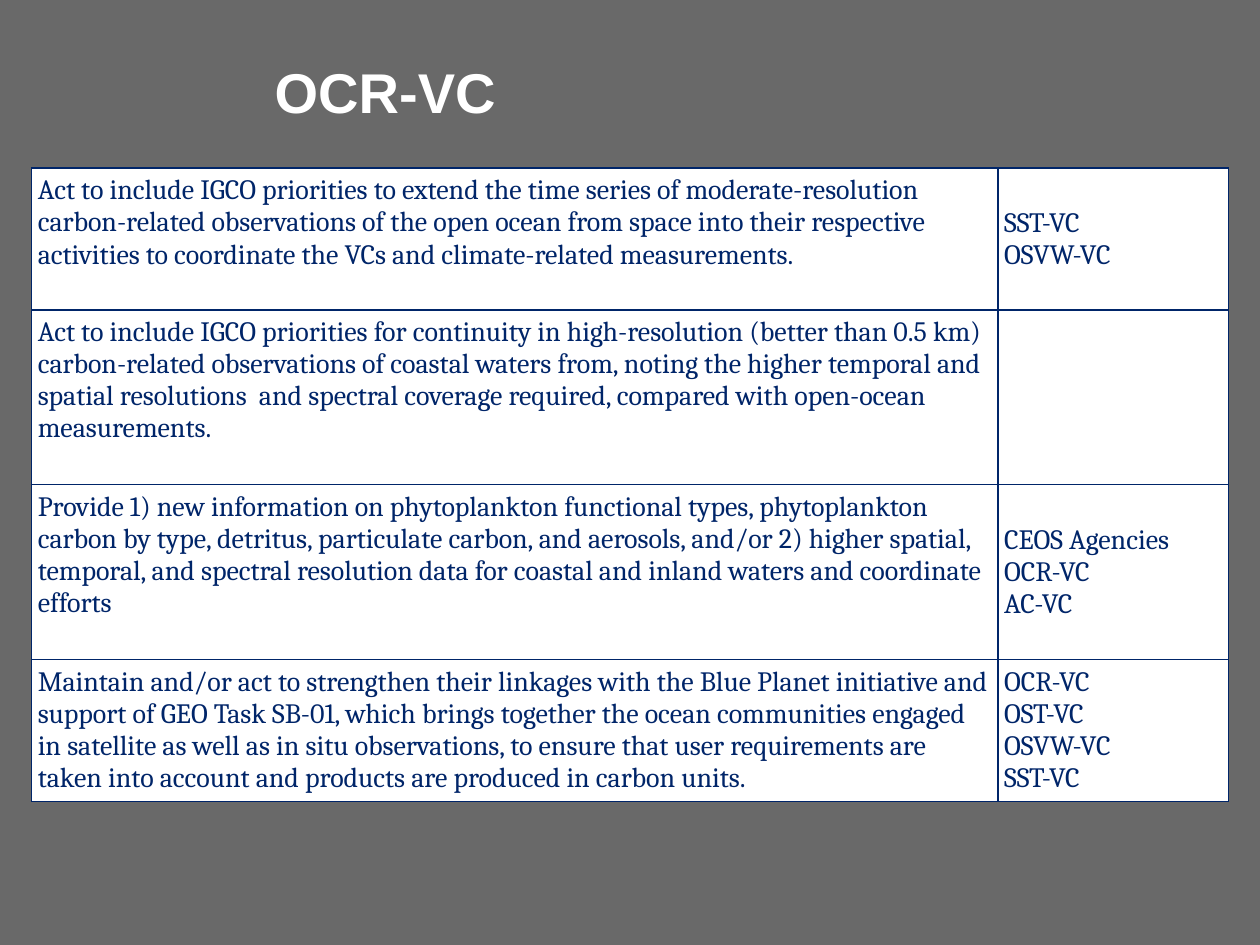
from typing import NamedTuple

from lxml.etree import SubElement
from pptx import Presentation
from pptx.dml.color import RGBColor as Rgb
from pptx.enum.text import MSO_ANCHOR as Anchor, MSO_AUTO_SIZE as Fit, PP_ALIGN as Align
from pptx.oxml.ns import qn
from pptx.util import Inches, Pt

WIDE, HIGH = 10, 7.5
COLORS = {"back": "696969", "cell": "FFFFFF", "ink": "002569", "title": "FFFFFF"}
COLS = (0.767, 0.183)  # shares of the slide's width
PAD = Inches(0.05)


class Action(NamedTuple):
    task: str
    teams: tuple[str, ...]
    share: float  # row height as a share of the slide's height


ACTIONS = [
    Action("Act to include IGCO priorities to extend the time series of "
           "moderate-resolution carbon-related observations of the open ocean from "
           "space into their respective activities to coordinate the VCs and "
           "climate-related measurements.",
           ("SST-VC", "OSVW-VC"), 0.15),
    Action("Act to include IGCO priorities for continuity in high-resolution (better "
           "than 0.5 km) carbon-related observations of coastal waters from, noting "
           "the higher temporal and spatial resolutions  and spectral coverage "
           "required, compared with open-ocean measurements.",
           (), 0.185),
    Action("Provide 1) new information on phytoplankton functional types, "
           "phytoplankton carbon by type, detritus, particulate carbon, and aerosols, "
           "and/or 2) higher spatial, temporal, and spectral resolution data for "
           "coastal and inland waters and coordinate efforts",
           ("CEOS Agencies", "OCR-VC", "AC-VC"), 0.185),
    Action("Maintain and/or act to strengthen their linkages with the Blue Planet "
           "initiative and support of GEO Task SB-01, which brings together the ocean "
           "communities engaged in satellite as well as in situ observations, to "
           "ensure that user requirements are taken into account and products are "
           "produced in carbon units.",
           ("OCR-VC", "OST-VC", "OSVW-VC", "SST-VC"), 0.15),
]


def across(share: float) -> int:
    return Inches(WIDE * share)


def down(share: float) -> int:
    return Inches(HIGH * share)


def write(frame, text: str, *, font: str, size: float, color: str, bold: bool = False) -> None:
    frame.word_wrap = True
    frame.text = text
    for para in frame.paragraphs:
        para.alignment = Align.LEFT
        para.font.name = font
        para.font.size = Pt(size)
        para.font.bold = bold
        para.font.color.rgb = Rgb.from_string(COLORS[color])


def edge(cell, color: str, width: float) -> None:
    """Draw all four borders; they must come before the cell's fill."""
    props = cell._tc.get_or_add_tcPr()
    for side in ("lnL", "lnR", "lnT", "lnB"):
        line = SubElement(props, qn(f"a:{side}"), w=str(Pt(width)))
        fill = SubElement(line, qn("a:solidFill"))
        SubElement(fill, qn("a:srgbClr"), val=COLORS[color])


def draw_cell(cell, text: str, anchor: Anchor) -> None:
    edge(cell, "ink", 1)
    cell.fill.solid()
    cell.fill.fore_color.rgb = Rgb.from_string(COLORS["cell"])
    cell.margin_left = cell.margin_right = PAD
    cell.margin_top = cell.margin_bottom = PAD
    cell.vertical_anchor = anchor
    write(cell.text_frame, text, font="Cambria", size=16, color="ink")


def draw_title(slide, text: str) -> None:
    title = slide.shapes.title
    title.left, title.top = across(0.208), down(0.047)
    title.width, title.height = across(0.608), down(0.153)
    frame = title.text_frame
    frame.auto_size = Fit.NONE
    frame.vertical_anchor = Anchor.TOP
    frame.margin_top = Inches(0.1)
    write(frame, text, font="Arial", size=32, color="title", bold=True)


def draw_table(slide, rows: list[Action]) -> None:
    table = slide.shapes.add_table(
        len(rows), len(COLS), across(0.025), down(0.178),
        across(sum(COLS)), down(sum(row.share for row in rows))).table
    for col, share in zip(table.columns, COLS):
        col.width = across(share)
    for i, row in enumerate(rows):
        table.rows[i].height = down(row.share)
        draw_cell(table.cell(i, 0), row.task, Anchor.TOP)
        draw_cell(table.cell(i, 1), "\n".join(row.teams), Anchor.MIDDLE)


def main() -> None:
    deck = Presentation()
    deck.slide_width, deck.slide_height = across(1), down(1)
    slide = deck.slides.add_slide(deck.slide_layouts[5])

    # Background
    fill = slide.background.fill
    fill.solid()
    fill.fore_color.rgb = Rgb.from_string(COLORS["back"])

    # Content
    draw_table(slide, ACTIONS)
    draw_title(slide, "OCR-VC")
    deck.save("out.pptx")


if __name__ == "__main__":
    main()
